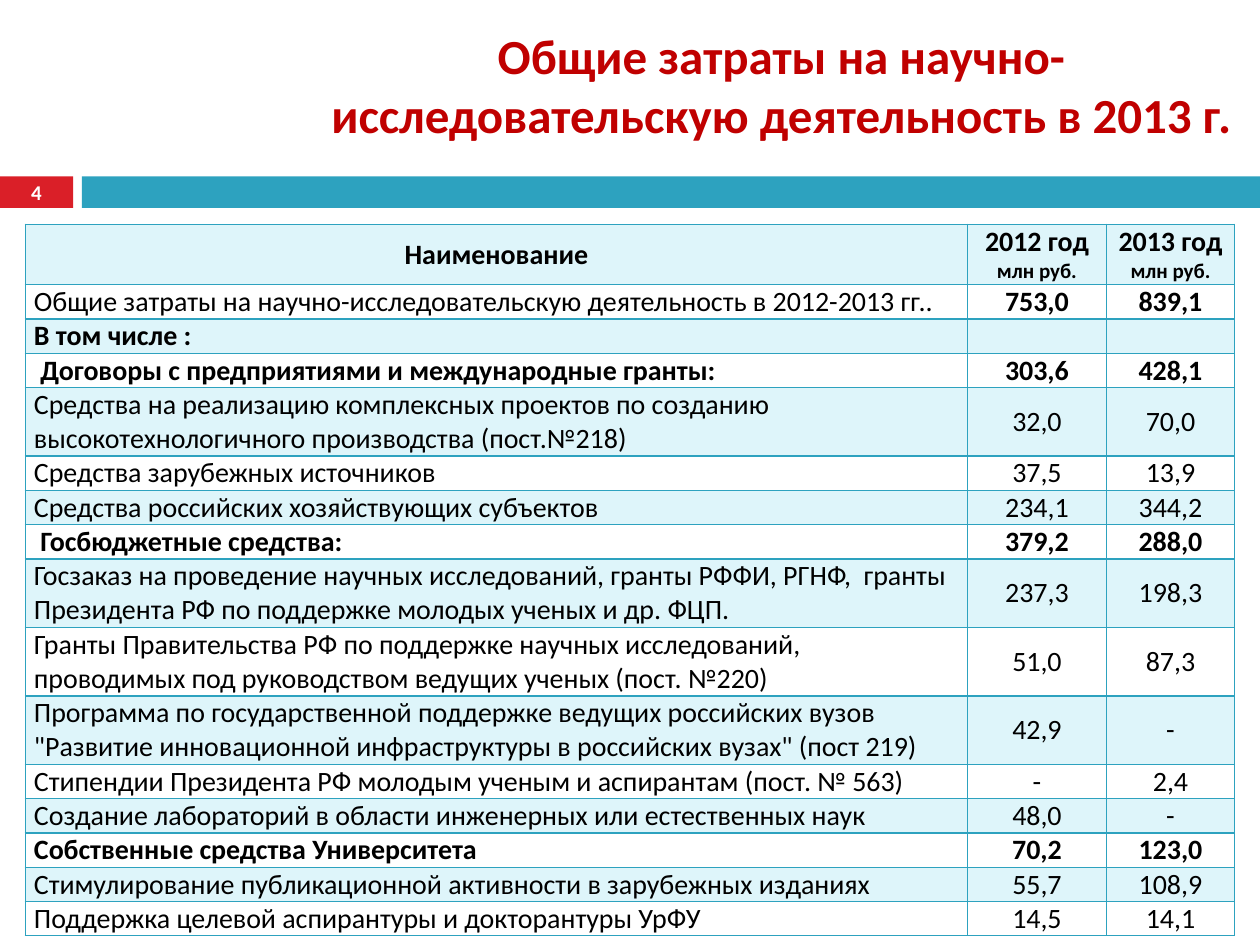
import pptx
import pptx.util
import pptx.dml.color
import pptx.enum.shapes
import pptx.enum.text
import pptx.oxml.ns
import lxml.etree

Inches = pptx.util.Inches
Pt = pptx.util.Pt
CENTER = pptx.enum.text.PP_ALIGN.CENTER
LEFT = pptx.enum.text.PP_ALIGN.LEFT
MIDDLE = pptx.enum.text.MSO_ANCHOR.MIDDLE
qn = pptx.oxml.ns.qn


def rgb(value):
    return pptx.dml.color.RGBColor.from_string(value)


def format_paragraph(paragraph, size, color, bold, align):
    paragraph.alignment = align
    paragraph.font.name = "Calibri"
    paragraph.font.size = Pt(size)
    paragraph.font.bold = bold
    paragraph.font.color.rgb = rgb(color)


deck = pptx.Presentation()
deck.slide_width = Inches(10)
deck.slide_height = Inches(7.5)
slide = deck.slides.add_slide(deck.slide_layouts[5])

title = slide.shapes.title
title.left, title.top = Inches(2.4), Inches(0.13)
title.width, title.height = Inches(7.6), Inches(1.08)
title.text_frame.text = "Общие затраты на научно-исследовательскую деятельность в 2013 г."
title.text_frame.vertical_anchor = MIDDLE
title.text_frame.word_wrap = True
format_paragraph(title.text_frame.paragraphs[0], 28, "C00000", True, CENTER)

for left, width, color, page_number in [
    (0, 0.58, "DA1F28", "4"),
    (0.65, 9.35, "2DA2BF", ""),
]:
    band = slide.shapes.add_shape(
        pptx.enum.shapes.MSO_SHAPE.RECTANGLE,
        Inches(left), Inches(1.4), Inches(width), Inches(0.25))
    band.shadow.inherit = False
    band.fill.solid()
    band.fill.fore_color.rgb = rgb(color)
    band.line.fill.background()
    if page_number:
        frame = band.text_frame
        frame.margin_top = frame.margin_bottom = 0
        frame.vertical_anchor = MIDDLE
        frame.text = page_number
        format_paragraph(frame.paragraphs[0], 12, "FFFFFF", True, CENTER)

HEADER, TOTAL, BOLD, PLAIN = "header", "total", "bold", "plain"
expenses = [
    (HEADER, 0.48, "Наименование", "2012 год\nмлн руб.", "2013 год\nмлн руб."),
    (TOTAL, 0.27, "Общие затраты на научно-исследовательскую деятельность в 2012-2013 гг..", "753,0", "839,1"),
    (BOLD, 0.27, "В том числе :", "", ""),
    (BOLD, 0.27, " Договоры с предприятиями и международные гранты:", "303,6", "428,1"),
    (PLAIN, 0.54, "Средства на реализацию комплексных проектов по созданию высокотехнологичного производства (пост.№218)", "32,0", "70,0"),
    (PLAIN, 0.27, "Средства зарубежных источников", "37,5", "13,9"),
    (PLAIN, 0.27, "Средства российских хозяйствующих субъектов", "234,1", "344,2"),
    (BOLD, 0.27, " Госбюджетные средства:", "379,2", "288,0"),
    (PLAIN, 0.54, "Госзаказ на проведение научных исследований, гранты РФФИ, РГНФ,  гранты Президента РФ по поддержке молодых ученых и др. ФЦП.", "237,3", "198,3"),
    (PLAIN, 0.54, "Гранты Правительства РФ по поддержке научных исследований, проводимых под руководством ведущих ученых (пост. №220)", "51,0", "87,3"),
    (PLAIN, 0.54, "Программа по государственной поддержке ведущих российских вузов \"Развитие инновационной инфраструктуры в российских вузах\" (пост 219)", "42,9", "-"),
    (PLAIN, 0.27, "Стипендии Президента РФ молодым ученым и аспирантам (пост. № 563)", "-", "2,4"),
    (PLAIN, 0.27, "Создание лабораторий в области инженерных или естественных наук", "48,0", "-"),
    (BOLD, 0.27, "Собственные средства Университета", "70,2", "123,0"),
    (PLAIN, 0.27, "Стимулирование публикационной активности в зарубежных изданиях", "55,7", "108,9"),
    (PLAIN, 0.27, "Поддержка целевой аспирантуры и докторантуры УрФУ", "14,5", "14,1"),
]

table = slide.shapes.add_table(
    len(expenses), 3, Inches(0.2), Inches(1.78), Inches(9.6), Inches(5.63)).table
for column, width in zip(table.columns, (7.48, 1.1, 1.02)):
    column.width = Inches(width)

for row_index, (kind, height, *texts) in enumerate(expenses):
    table.rows[row_index].height = Inches(height)
    for column_index, text in enumerate(texts):
        cell = table.cell(row_index, column_index)
        cell.margin_left = cell.margin_right = Inches(0.07)
        cell.margin_top = cell.margin_bottom = 0
        cell.vertical_anchor = MIDDLE
        cell.text = text
        bold = kind in (HEADER, BOLD) or (kind == TOTAL and column_index > 0)
        align = CENTER if kind == HEADER or column_index > 0 else LEFT
        for line_index, paragraph in enumerate(cell.text_frame.paragraphs):
            format_paragraph(paragraph, 12 if line_index else 16, "000000", bold, align)
            if not text:
                lxml.etree.SubElement(paragraph._p, qn("a:endParaRPr"), sz="1600")

        properties = cell._tc.get_or_add_tcPr()
        for side in ("a:lnL", "a:lnR", "a:lnT", "a:lnB"):
            border = lxml.etree.SubElement(properties, qn(side), w=str(Pt(0.79)))
            border_fill = lxml.etree.SubElement(border, qn("a:solidFill"))
            lxml.etree.SubElement(border_fill, qn("a:srgbClr"), val="2DA2BF")
        cell.fill.solid()
        cell.fill.fore_color.rgb = rgb("FFFFFF" if row_index % 2 else "DEF5FA")

deck.save("out.pptx")
